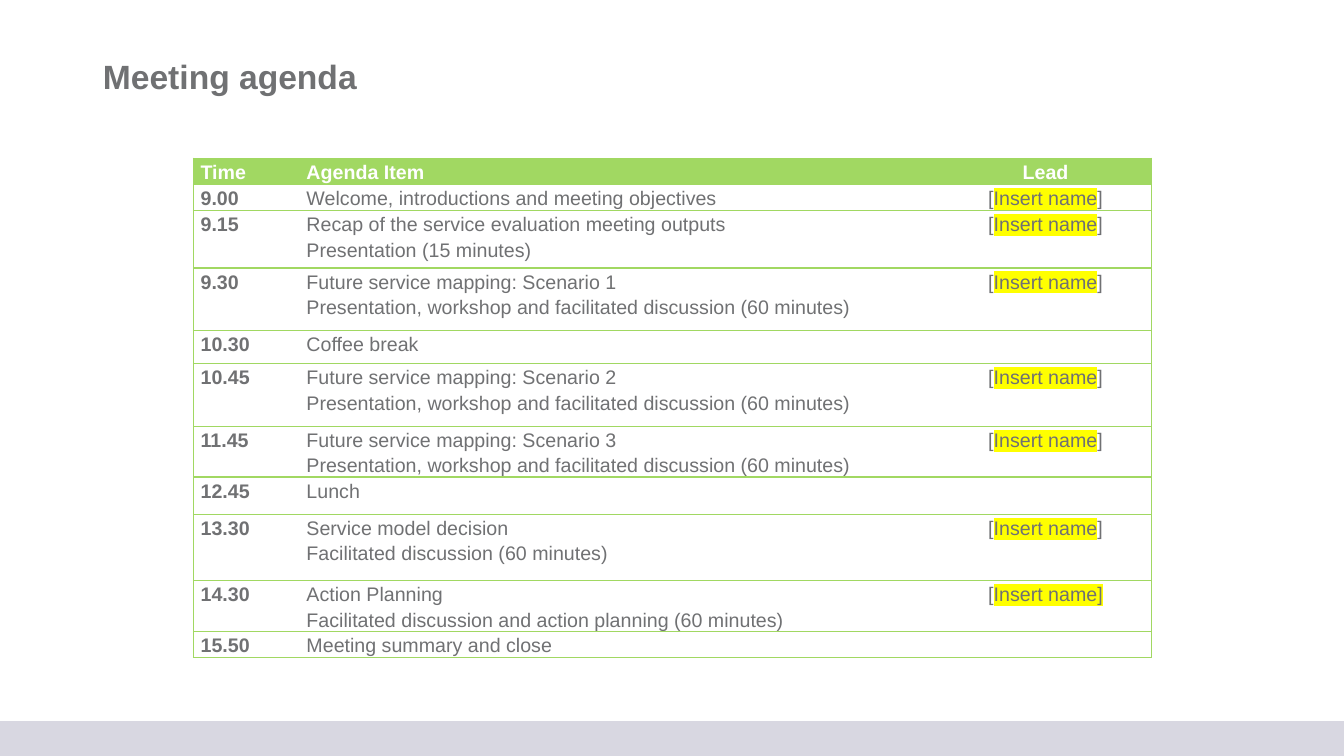
from lxml import etree
from pptx import Presentation
from pptx.dml.color import RGBColor
from pptx.enum.shapes import MSO_SHAPE as SHAPE
from pptx.enum.text import MSO_ANCHOR as ANCHOR, PP_ALIGN as ALIGN
from pptx.oxml.ns import qn
from pptx.util import Inches, Pt

GREEN, GREY, WHITE, LILAC, YELLOW = "A1D862", "707173", "FFFFFF", "D8D7E1", "FFFF00"


def rgb(value):
    return RGBColor.from_string(value)


def add_run(p, text, size, color, bold, highlight=None):
    r = p.add_run()
    r.text = text
    for name, value in {"name": "Arial", "size": Pt(size), "bold": bold}.items():
        setattr(r.font, name, value)
    r.font.color.rgb = rgb(color)
    if highlight:
        mark = etree.Element(qn("a:highlight"))
        etree.SubElement(mark, qn("a:srgbClr"), val=highlight)
        r.font._element.find(qn("a:solidFill")).addnext(mark)


prs = Presentation()
prs.slide_width, prs.slide_height = Inches(13.33), Inches(7.5)
s = prs.slides.add_slide(prs.slide_layouts[5])

bar = s.shapes.add_shape(SHAPE.RECTANGLE, 0, Inches(7.16), Inches(13.33), Inches(0.34))
bar.shadow.inherit = False
bar.fill.solid()
bar.fill.fore_color.rgb = rgb(LILAC)
bar.line.color.rgb = rgb(LILAC)
bar.line.width = Pt(1)

title = s.shapes.title
box = {"left": 0.92, "top": 0.4, "width": 11.5, "height": 0.75}
for name, value in box.items():
    setattr(title, name, Inches(value))
title.text_frame.vertical_anchor = ANCHOR.MIDDLE
p = title.text_frame.paragraphs[0]
p.alignment, p.line_spacing = ALIGN.LEFT, 0.9
add_run(p, "Meeting agenda", 24, GREY, True)

NAME = [("[", None), ("Insert name", YELLOW), ("]", None)]
NAME_MARKED = [("[", None), ("Insert name]", YELLOW)]
WORKSHOP = "Presentation, workshop and facilitated discussion (60 minutes)"
agenda = [
    (0.26, "Time", ["Agenda Item"], [("Lead", None)]),
    (0.26, "9.00", ["Welcome, introductions and meeting objectives"], NAME),
    (0.57, "9.15", ["Recap of the service evaluation meeting outputs",
                    "Presentation (15 minutes)"], NAME),
    (0.62, "9.30", ["Future service mapping: Scenario 1", WORKSHOP], NAME),
    (0.33, "10.30", ["Coffee break"], []),
    (0.62, "10.45", ["Future service mapping: Scenario 2", WORKSHOP], NAME),
    (0.26, "11.45", ["Future service mapping: Scenario 3", WORKSHOP], NAME),
    (0.37, "12.45", ["Lunch"], []),
    (0.66, "13.30", ["Service model decision", "Facilitated discussion (60 minutes)"], NAME),
    (0.26, "14.30", ["Action Planning",
                     "Facilitated discussion and action planning (60 minutes)"], NAME_MARKED),
    (0.26, "15.50", ["Meeting summary and close"], []),
]

height = sum(row[0] for row in agenda)
table = s.shapes.add_table(len(agenda), 3, Inches(1.92), Inches(1.57),
                           Inches(9.5), Inches(height)).table
table.horz_banding = False
for column, width in zip(table.columns, (1.05, 6.35, 2.1)):
    column.width = Inches(width)

margins = {"margin_left": 0.07, "margin_right": 0.07, "margin_top": 0, "margin_bottom": 0}
for i, (row_height, time, items, lead) in enumerate(agenda):
    table.rows[i].height = Inches(row_height)
    header = i == 0
    color = WHITE if header else GREY
    for j, parts in enumerate(([(time, None)], [(item, None) for item in items], lead)):
        cell = table.cell(i, j)
        for name, value in margins.items():
            setattr(cell, name, Inches(value))

        tcPr = cell._tc.get_or_add_tcPr()
        for side, visible in {"L": j == 0, "R": j == 2, "T": True, "B": True}.items():
            ln = etree.SubElement(tcPr, qn(f"a:ln{side}"), w=str(Pt(1)))
            if visible:
                fill = etree.SubElement(ln, qn("a:solidFill"))
                etree.SubElement(fill, qn("a:srgbClr"), val=GREEN)
            else:
                etree.SubElement(ln, qn("a:noFill"))
        cell.fill.solid()
        cell.fill.fore_color.rgb = rgb(GREEN if header else WHITE)

        p = cell.text_frame.paragraphs[0]
        p.alignment = ALIGN.CENTER if j == 2 else ALIGN.LEFT
        p.line_spacing, p.space_before = 1.15, Pt(6)
        for k, (text, highlight) in enumerate(parts):
            if j == 1 and k:
                p.add_line_break()
            add_run(p, text, 14, color, header or j == 0, highlight)
        etree.SubElement(p._p, qn("a:endParaRPr"), sz="1400")

prs.save("out.pptx")
